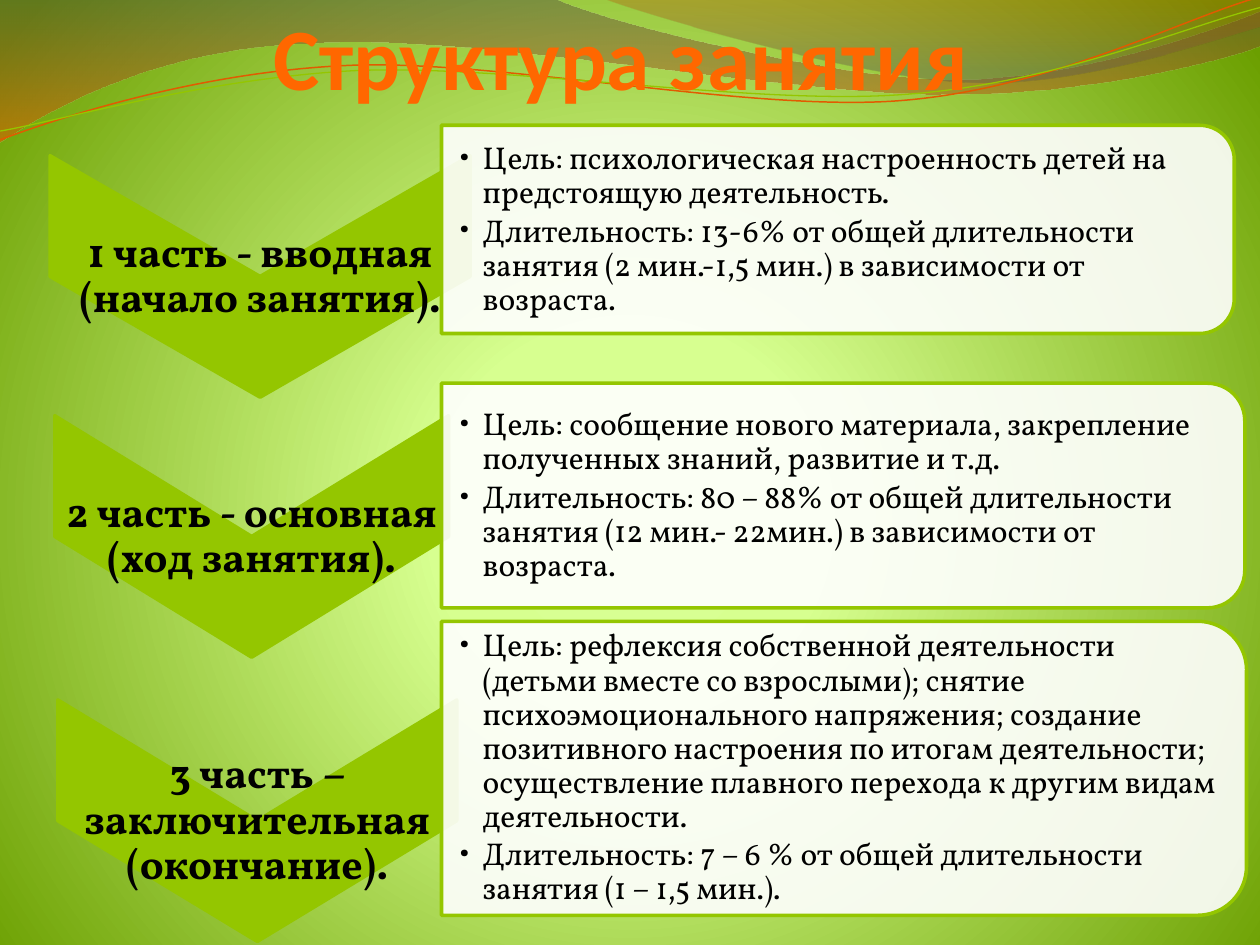
"""Build a slide on the three parts of a lesson, with labelled chevrons and cards."""
from dataclasses import dataclass
from typing import NamedTuple

from lxml.etree import SubElement as Sub
from pptx import Presentation as Deck
from pptx.dml.color import RGBColor as Rgb
from pptx.enum.shapes import MSO_SHAPE as Kind
from pptx.enum.text import MSO_ANCHOR as Anchor, PP_ALIGN as Align
from pptx.oxml import parse_xml as to_xml
from pptx.oxml.ns import nsdecls, qn
from pptx.util import Pt


@dataclass(frozen=True)
class Theme:
    green: str = "94C600"
    rust: str = "E15B00"
    title: str = "FF6700"
    ink: str = "000000"
    card: str = "FFFFFF"
    head: str = "Calibri"
    body: str = "Vollkorn"
    big: int = 50
    mid: int = 24
    small: int = 18


class Box(NamedTuple):
    left: float
    top: float
    width: float
    height: float


class Stop(NamedTuple):
    place: int
    color: str
    alpha: int = 100


class Font(NamedTuple):
    name: str
    size: int
    color: str
    bold: bool = False


class Part(NamedTuple):
    label: str
    tag: Box
    card: Box
    notes: tuple[str, ...]


class Band(NamedTuple):
    start: tuple
    legs: tuple
    stops: tuple[Stop, ...]


class Wave(NamedTuple):
    start: tuple
    legs: tuple
    color: str
    width: float


THEME = Theme()
GLOW = (Stop(0, "D9FF95"), Stop(25, "D7FF90"), Stop(100, "6B9F00"))
ROUND = '<a:path path="circle"><a:fillToRect l="10000" t="110000" r="10000" b="100000"/></a:path>'
DOWN = '<a:lin ang="5400000" scaled="1"/>'
BANDS = (
    Band((0, 0), (
        (316.8, -0.7), (342.7, 12.2, 478.1, 45.4, 545.8, 45.4), (614.2, 45.4, 690.5, 18.7, 720, 6.5),
        (720.7, 25.9), (707.8, 31.7, 626.4, 54.7, 537.1, 54), (447.8, 54, 275, 20.2, 185, 24.5),
        (92.9, 25.9, 33.1, 59.8, -0.7, 81.4), (0, 0)),
        (Stop(0, "554D41", 45), Stop(100, "E75D00", 55))),
    Band((344.9, -0.7), (
        (366.5, 7.9, 491, 44.6, 553.7, 46.8), (616.3, 49.7, 691.9, 23, 720, 15.1), (720, 0),
        (344.9, -0.7)),
        (Stop(0, "BD4C00", 30), Stop(80, "685D4B", 45))),
)
WAVES = (
    Wave((0, 79.9), (
        (34.6, 67, 113.8, 41, 199.4, 37.4), (284.4, 33.8, 427, 64.1, 513.4, 57.6),
        (599.8, 51.1, 675.4, 10.8, 718.6, -1.4)), THEME.rust, 0.85),
    Wave((0, 74.9), (
        (33.8, 69.1, 118.1, 44.6, 203.8, 40.3), (290.2, 36.7, 429.8, 60.5, 516.2, 54),
        (601.9, 48.2, 677.5, 15.1, 720, 4.3)), THEME.green, 0.75),
)
PARTS = (
    Part("1 часть - вводная (начало занятия).", Box(28.6, 89, 240, 138), Box(252.3, 71.6, 453, 119), (
        "Цель: психологическая настроенность детей на предстоящую деятельность.",
        "Длительность: 13-6% от общей длительности занятия (2 мин.-1,5 мин.) в зависимости от возраста.")),
    Part("2 часть - основная (ход занятия).", Box(31.3, 237.6, 225, 138), Box(252.3, 219, 459, 128.4), (
        "Цель: сообщение нового материала, закрепление полученных знаний, развитие и т.д.",
        "Длительность: 80 – 88% от общей длительности занятия (12 мин.- 22мин.) в зависимости от возраста.")),
    Part("3 часть – заключительная (окончание).", Box(33, 400, 228, 138), Box(252.3, 355, 460, 168), (
        "Цель: рефлексия собственной деятельности (детьми вместе со взрослыми); снятие "
        "психоэмоционального напряжения; создание позитивного настроения по итогам деятельности; "
        "осуществление плавного перехода к другим видам деятельности.",
        "Длительность: 7 – 6 % от общей длительности занятия (1 – 1,5 мин.).")),
)


def blend(root, stops: tuple[Stop, ...], tail: str) -> None:
    """Swap the first solid fill under root for a gradient."""
    marks = "".join(
        f'<a:gs pos="{s.place * 1000}"><a:srgbClr val="{s.color}">'
        f'<a:alpha val="{s.alpha * 1000}"/></a:srgbClr></a:gs>' for s in stops)
    old = next(root.iter(qn("a:solidFill")))
    old.getparent().replace(old, to_xml(
        f'<a:gradFill {nsdecls("a")} rotWithShape="1"><a:gsLst>{marks}</a:gsLst>{tail}</a:gradFill>'))


def draw(slide, item: Band | Wave, close: bool):
    """Draw an outline whose six-number legs are cubic curves."""
    pen = slide.shapes.build_freeform(*map(Pt, item.start), scale=1.0)
    dots = [(Pt(x), Pt(y)) for leg in item.legs for x, y in zip(leg[::2], leg[1::2])]
    pen.add_line_segments(dots, close=close)
    shape = pen.convert_to_shape()
    shape.shadow.inherit = False
    lines = iter(list(shape.element.iter(qn("a:lnTo"))))
    for leg in item.legs:
        line = next(lines)
        if len(leg) == 6:
            line.tag = qn("a:cubicBezTo")
            for _ in range(2):
                extra = next(lines)
                owner = extra.getparent()
                line.append(extra[0])
                owner.remove(extra)
    return shape


def add_band(slide, band: Band) -> None:
    """Add a filled ribbon."""
    shape = draw(slide, band, True)
    shape.fill.solid()
    shape.line.fill.background()
    blend(shape.element, band.stops, DOWN)


def add_wave(slide, wave: Wave) -> None:
    """Add a thin curved line."""
    shape = draw(slide, wave, False)
    shape.fill.background()
    shape.line.color.rgb = Rgb.from_string(wave.color)
    shape.line.width = Pt(wave.width)


def add_turned(slide, kind: Kind, box: Box, color: str, alpha: int = 100) -> None:
    """Add a shape turned by a quarter so that it fills the box."""
    left = box.left + (box.width - box.height) / 2
    top = box.top + (box.height - box.width) / 2
    shape = slide.shapes.add_shape(kind, Pt(left), Pt(top), Pt(box.height), Pt(box.width))
    shape.rotation = 90
    shape.shadow.inherit = False
    shape.fill.solid()
    shape.fill.fore_color.rgb = Rgb.from_string(color)
    if alpha < 100:
        tint = next(shape.element.iter(qn("a:srgbClr")))
        Sub(tint, qn("a:alpha"), val=str(alpha * 1000))
    shape.line.color.rgb = Rgb.from_string(THEME.green)
    shape.line.width = Pt(2)


def add_text(slide, box: Box, lines: tuple[str, ...], font: Font, anchor: Anchor,
             pad: float = 0, space: float = 0.9, list_pad: float = 0) -> None:
    """Add centred text, or a bullet list when list_pad is given."""
    frame = slide.shapes.add_textbox(*map(Pt, box)).text_frame
    frame.word_wrap = True
    frame.vertical_anchor = anchor
    frame.margin_left = Pt(list_pad or pad)
    frame.margin_top = frame.margin_right = frame.margin_bottom = Pt(pad)
    for spot, line in enumerate(lines):
        para = frame.add_paragraph() if spot else frame.paragraphs[0]
        para.text = line
        para.line_spacing = space
        para.alignment = Align.LEFT if list_pad else Align.CENTER
        if list_pad:
            para.space_after = Pt(2.7)
            props = para._p.get_or_add_pPr()
            props.set("marL", str(Pt(13.5)))
            props.set("indent", str(-Pt(13.5)))
            Sub(props, qn("a:buFont"), typeface=font.name)
            Sub(props, qn("a:buChar"), char="•")
        para.font.name, para.font.size, para.font.bold = font.name, Pt(font.size), font.bold
        para.font.color.rgb = Rgb.from_string(font.color)


def add_part(slide, part: Part) -> None:
    """Add one lesson part: chevron, label, card and notes."""
    card = part.card
    add_turned(slide, Kind.CHEVRON, part.tag, THEME.green)
    add_text(slide, part.tag, (part.label,), Font(THEME.body, THEME.mid, THEME.ink, True),
             Anchor.MIDDLE, 1.2)
    add_turned(slide, Kind.ROUND_2_SAME_RECTANGLE, card, THEME.card, 90)
    inner = Box(card.left, card.top + 6, card.width - 6, card.height - 12)
    add_text(slide, inner, part.notes, Font(THEME.body, THEME.small, THEME.ink),
             Anchor.MIDDLE, 0.9, list_pad=10)


def main() -> None:
    """Build and save the slide."""
    deck = Deck()
    deck.slide_width, deck.slide_height = Pt(720), Pt(540)
    slide = deck.slides.add_slide(deck.slide_layouts[6])
    slide.background.fill.solid()
    blend(slide.element, GLOW, ROUND)
    for band in BANDS:
        add_band(slide, band)
    for wave in WAVES:
        add_wave(slide, wave)
    add_text(slide, Box(31, 0.5, 648, 61), ("Структура занятия",),
             Font(THEME.head, THEME.big, THEME.title, True), Anchor.BOTTOM, space=1.0)
    for part in PARTS:
        add_part(slide, part)
    deck.save("out.pptx")


if __name__ == "__main__":
    main()
